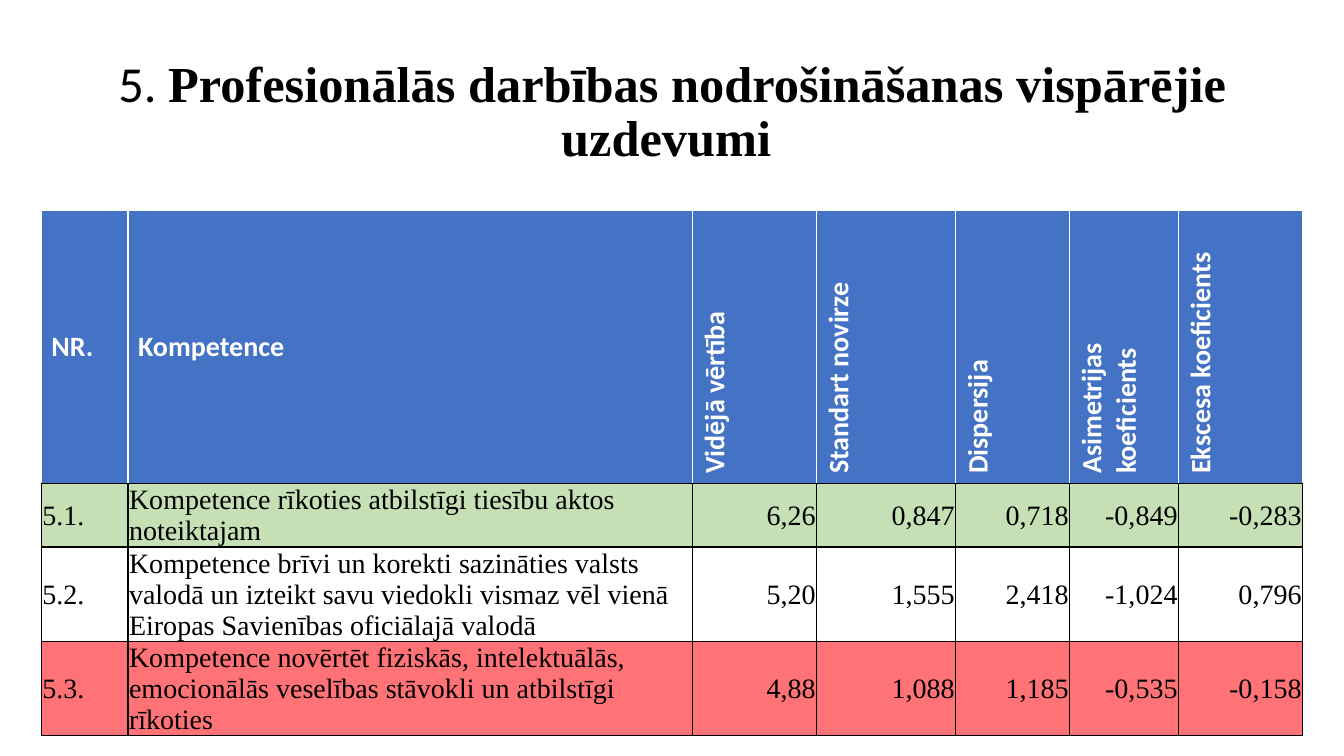
from dataclasses import dataclass

from lxml.etree import SubElement
from pptx import Presentation
from pptx.dml.color import RGBColor
from pptx.enum.text import MSO_ANCHOR as ANCHOR, MSO_AUTO_SIZE as AUTOSIZE, PP_ALIGN as ALIGN
from pptx.oxml.ns import qn
from pptx.util import Inches, Pt


@dataclass(frozen=True)
class Theme:
    black: str = "000000"
    white: str = "FFFFFF"
    header: str = "4472C4"
    high: str = "C5E0B4"
    low: str = "FF7377"
    sans: str = "Calibri"
    serif: str = "Times New Roman"
    title_size: int = 36
    table_size: int = 20
    border: int = 1


THEME = Theme()
TITLE = [
    ("5. ", THEME.sans, False),
    ("Profesionālās darbības nodrošināšanas vispārējie uzdevumi ", THEME.serif, True),
]
HEADERS = ["NR.", "Kompetence", "Vidējā vērtība", "Standart novirze", "Dispersija",
           "Asimetrijas koeficients", "Ekscesa koeficients"]
ROWS = [
    (THEME.high, ["5.1.", "Kompetence rīkoties atbilstīgi tiesību aktos noteiktajam",
                  "6,26", "0,847", "0,718", "-0,849", "-0,283"]),
    (THEME.white, ["5.2.", "Kompetence brīvi un korekti sazināties valsts valodā un izteikt savu "
                   "viedokli vismaz vēl vienā Eiropas Savienības oficiālajā valodā",
                   "5,20", "1,555", "2,418", "-1,024", "0,796"]),
    (THEME.low, ["5.3.", "Kompetence novērtēt fiziskās, intelektuālās, emocionālās veselības "
                 "stāvokli un atbilstīgi rīkoties",
                 "4,88", "1,088", "1,185", "-0,535", "-0,158"]),
]
COL_WIDTHS = [0.86, 5.6, 1.23, 1.38, 1.13, 1.08, 1.23]
ROW_HEIGHTS = [2.71, 0.62, 0.93, 0.93]
FIRST_NUMBER_COL = 2
BODY_MARGINS = {"margin_left": 0.01, "margin_right": 0.01, "margin_top": 0.01, "margin_bottom": 0}


def set_attrs(target, values):
    for name, value in values.items():
        setattr(target, name, value)


def add_run(p, text, font, size, color, bold):
    r = p.add_run()
    r.text = text
    set_attrs(r.font, {"name": font, "size": Pt(size), "bold": bold})
    r.font.color.rgb = RGBColor.from_string(color)


def add_title(s):
    sp = s.shapes.title
    set_attrs(sp, {"left": Inches(0.92), "top": Inches(0.4),
                   "width": Inches(11.5), "height": Inches(1.45)})
    tf = sp.text_frame
    set_attrs(tf, {"word_wrap": True, "auto_size": AUTOSIZE.NONE,
                   "vertical_anchor": ANCHOR.MIDDLE})
    p = tf.paragraphs[0]
    set_attrs(p, {"alignment": ALIGN.CENTER, "line_spacing": 0.9})
    for text, font, bold in TITLE:
        add_run(p, text, font, THEME.title_size, THEME.black, bold)


def set_borders(cell, side_color, bottom_color):
    tcPr = cell._tc.get_or_add_tcPr()
    for side in "LRTB":
        ln = SubElement(tcPr, qn(f"a:ln{side}"), w=str(Pt(THEME.border)))
        fill = SubElement(ln, qn("a:solidFill"))
        SubElement(fill, qn("a:srgbClr"), val=bottom_color if side == "B" else side_color)


def fill_cell(cell, text, fill, font, color, bold, side_color, align):
    set_borders(cell, side_color, THEME.black)
    cell.fill.solid()
    cell.fill.fore_color.rgb = RGBColor.from_string(fill)
    cell.vertical_anchor = ANCHOR.MIDDLE
    p = cell.text_frame.paragraphs[0]
    p.alignment = align
    add_run(p, text, font, THEME.table_size, color, bold)


def add_header(table):
    for col, text in enumerate(HEADERS):
        cell = table.cell(0, col)
        fill_cell(cell, text, THEME.header, THEME.sans, THEME.white, True, THEME.white, ALIGN.LEFT)
        if col >= FIRST_NUMBER_COL:
            cell._tc.get_or_add_tcPr().set("vert", "vert270")


def add_body(table):
    margins = {name: Inches(value) for name, value in BODY_MARGINS.items()}
    for row, (fill, texts) in enumerate(ROWS, start=1):
        for col, text in enumerate(texts):
            cell = table.cell(row, col)
            align = ALIGN.RIGHT if col >= FIRST_NUMBER_COL else ALIGN.LEFT
            fill_cell(cell, text, fill, THEME.serif, THEME.black, False, THEME.black, align)
            set_attrs(cell, margins)


def add_competence_table(s):
    table = s.shapes.add_table(
        len(ROW_HEIGHTS), len(COL_WIDTHS), Inches(0.41), Inches(2.09),
        Inches(sum(COL_WIDTHS)), Inches(sum(ROW_HEIGHTS))).table
    for column, width in zip(table.columns, COL_WIDTHS):
        column.width = Inches(width)
    for row, height in zip(table.rows, ROW_HEIGHTS):
        row.height = Inches(height)
    add_header(table)
    add_body(table)


def main():
    prs = Presentation()
    set_attrs(prs, {"slide_width": Inches(13.33), "slide_height": Inches(7.5)})
    s = prs.slides.add_slide(prs.slide_layouts.get_by_name("Title Only"))
    add_title(s)
    add_competence_table(s)
    prs.save("out.pptx")


if __name__ == "__main__":
    main()
